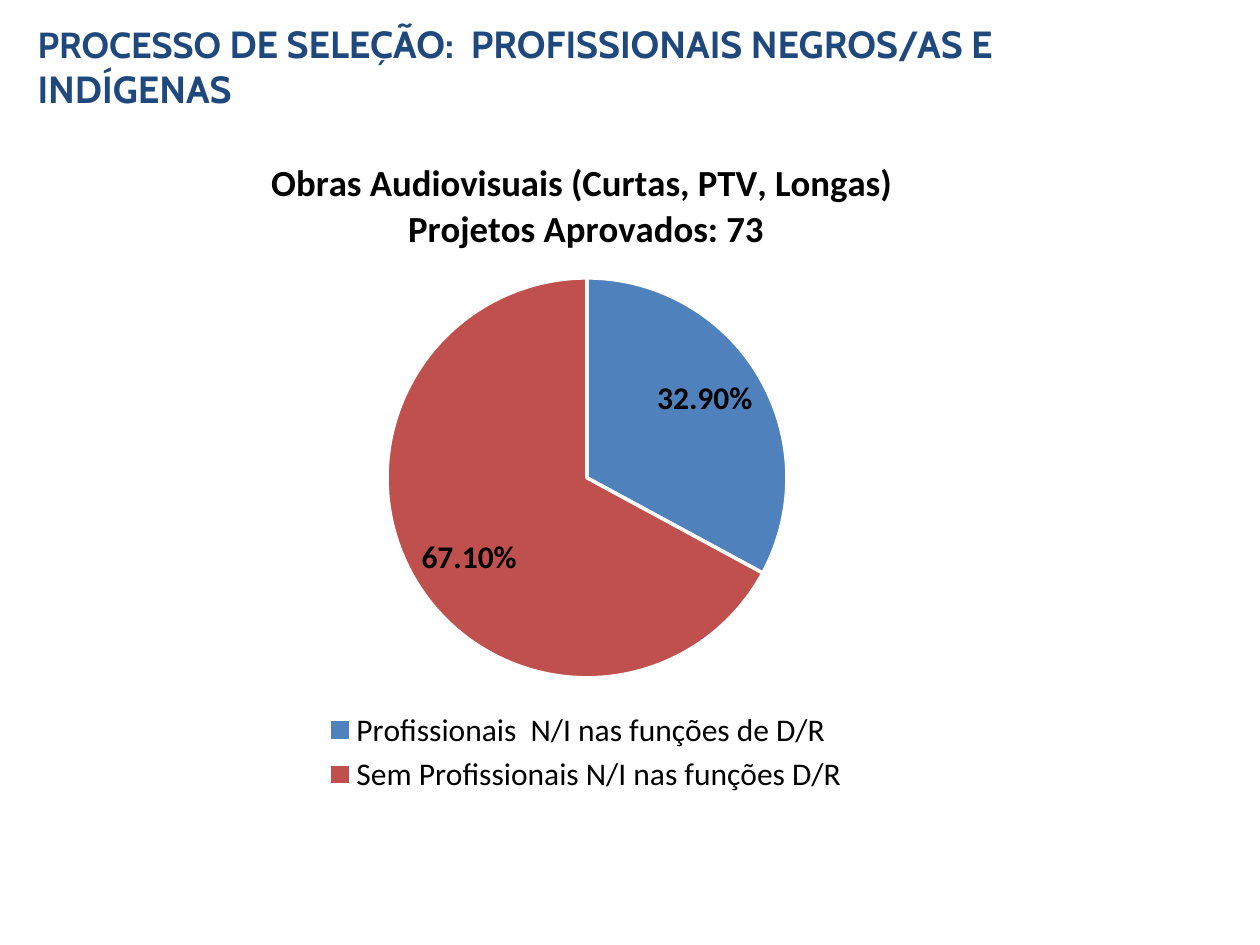
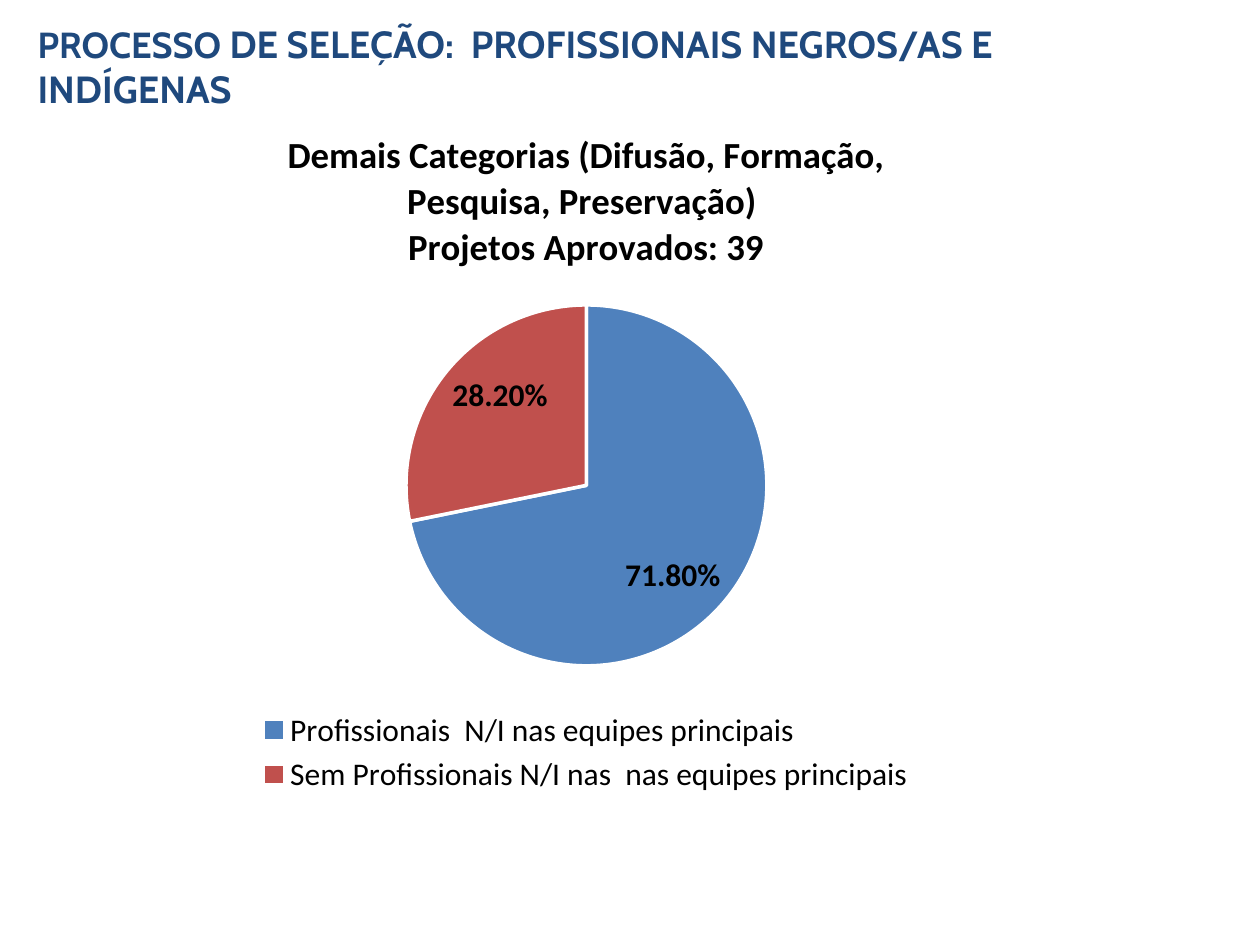
from lxml import etree
from pptx import Presentation
from pptx import util as u
from pptx.chart.data import CategoryChartData
from pptx.dml.color import RGBColor
from pptx.enum import chart as charts, text
from pptx.oxml.ns import qn

PX = 914400 / 126
COLORS = {
    "title": "1F497D",
    "text": "000000",
    "with": "4F81BD",
    "without": "C0504D",
    "edge": "FFFFFF",
}
TITLE_FONT, CHART_FONT = "Cabin", "Calibri"
TITLE_BOX = (25, 26, 1121, 80)
TITLE_RUNS = [
    ("PROCESSO", 20.7),
    (" DE SELEÇÃO:  PROFISSIONAIS NEGROS/AS E INDÍGENAS", 21.6),
]

# Chart boxes are (left, top, width, height); pie boxes are relative to them
SLIDES = [
    {
        "heading": "Obras Audiovisuais (Curtas, PTV, Longas) \nProjetos Aprovados: 73",
        "shares": {
            "Profissionais  N/I nas funções de D/R": 0.329,
            "Sem Profissionais N/I nas funções D/R": 0.671,
        },
        "box": (123, 135, 926, 665),
        "pie": (264, 143, 400),
    },
    {
        "heading": "Demais Categorias (Difusão, Formação, Pesquisa, Preservação) \n"
                   "Projetos Aprovados: 39",
        "shares": {
            "Profissionais  N/I nas equipes principais": 0.718,
            "Sem Profissionais N/I nas  nas equipes principais": 0.282,
        },
        "box": (123, 106, 926, 694),
        "pie": (283, 199, 361),
    },
]


def emu(px):
    return u.Emu(round(px * PX))


def color(name):
    return RGBColor.from_string(COLORS[name])


def style(font, name, size, color_name, bold):
    font.name = name
    font.size = u.Pt(size)
    font.bold = bold
    font.color.rgb = color(color_name)


def set_title(slide, box):
    title = slide.shapes.title
    title.left, title.top, title.width, title.height = map(emu, box)
    frame = title.text_frame
    frame.word_wrap = True
    frame.auto_size = text.MSO_AUTO_SIZE.NONE
    frame.vertical_anchor = text.MSO_ANCHOR.MIDDLE
    paragraph = frame.paragraphs[0]
    paragraph.alignment = text.PP_ALIGN.LEFT
    for words, size in TITLE_RUNS:
        run = paragraph.add_run()
        run.text = words
        style(run.font, TITLE_FONT, size, "title", True)


def place_pie(chart, box, pie):
    """Fix the pie's square inside the chart box, as fractions of the box."""
    width, height = box[2:]
    left, top, diameter = pie
    fractions = {"x": left / width, "y": top / height,
                 "w": diameter / width, "h": diameter / height}
    plot_area = chart._chartSpace.find(".//" + qn("c:plotArea"))
    for old_layout in plot_area.findall(qn("c:layout")):
        plot_area.remove(old_layout)
    layout = etree.Element(qn("c:layout"))
    plot_area.insert(0, layout)
    manual = etree.SubElement(layout, qn("c:manualLayout"))
    settings = {"layoutTarget": "inner", "xMode": "edge", "yMode": "edge"}
    settings.update((key, f"{value:.4f}") for key, value in fractions.items())
    for tag, value in settings.items():
        etree.SubElement(manual, qn("c:" + tag)).set("val", value)


def add_pie(slide, box, pie, heading, shares):
    data = CategoryChartData(number_format="0.00%")
    data.categories = list(shares)
    data.add_series("Series 1", list(shares.values()))
    chart = slide.shapes.add_chart(
        charts.XL_CHART_TYPE.PIE, *map(emu, box), data).chart
    style(chart.font, CHART_FONT, 10, "text", False)
    place_pie(chart, box, pie)

    # Heading
    chart.has_title = True
    frame = chart.chart_title.text_frame
    frame.text = heading
    for paragraph in frame.paragraphs:
        for run in paragraph.runs:
            style(run.font, CHART_FONT, 21, "text", True)
    chart.chart_title.include_in_layout = False

    # Legend
    chart.has_legend = True
    chart.legend.position = charts.XL_LEGEND_POSITION.BOTTOM
    chart.legend.include_in_layout = False
    style(chart.legend.font, CHART_FONT, 18, "text", False)

    # Slices and their labels
    plot = chart.plots[0]
    plot.vary_by_categories = True
    series = plot.series[0]
    for index, name in enumerate(("with", "without")):
        slice_format = series.points[index].format
        slice_format.fill.solid()
        slice_format.fill.fore_color.rgb = color(name)
        slice_format.line.color.rgb = color("edge")
        slice_format.line.width = u.Pt(2)
    labels = series.data_labels
    labels.show_value = True
    labels.show_percentage = False
    labels.number_format = "0.00%"
    labels.number_format_is_linked = False
    labels.position = charts.XL_LABEL_POSITION.INSIDE_END
    style(labels.font, CHART_FONT, 18, "text", True)


def main():
    presentation = Presentation()
    presentation.slide_width = u.Inches(10)
    presentation.slide_height = u.Inches(7.5)
    title_only = presentation.slide_layouts[5]
    for content in SLIDES:
        slide = presentation.slides.add_slide(title_only)
        set_title(slide, TITLE_BOX)
        add_pie(slide, **content)
    presentation.save("out.pptx")


if __name__ == "__main__":
    main()
